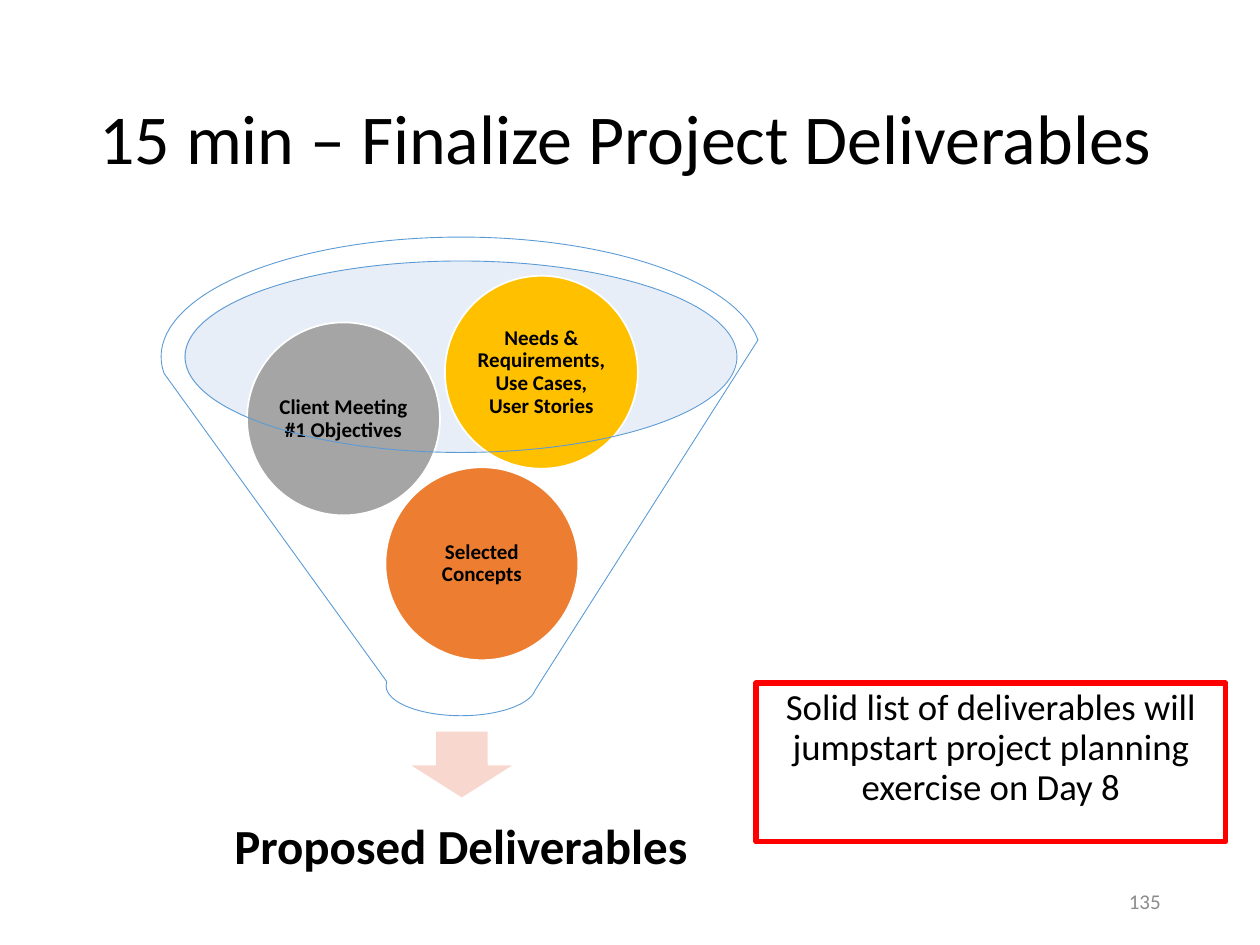
from dataclasses import dataclass

from lxml import etree
from pptx import Presentation
from pptx.dml.color import RGBColor
from pptx.enum.shapes import MSO_SHAPE
from pptx.enum.text import MSO_ANCHOR, PP_ALIGN
from pptx.oxml.ns import qn
from pptx.util import Cm, Pt

OVAL, ARROW, FUNNEL = MSO_SHAPE.OVAL, MSO_SHAPE.DOWN_ARROW, MSO_SHAPE.FUNNEL
TOP, MIDDLE = MSO_ANCHOR.TOP, MSO_ANCHOR.MIDDLE
LEFT, CENTER, RIGHT = PP_ALIGN.LEFT, PP_ALIGN.CENTER, PP_ALIGN.RIGHT


@dataclass(frozen=True)
class Theme:
    font: str = "Calibri"
    ink: str = "000000"
    gray: str = "8C8C8C"
    white: str = "FFFFFF"
    red: str = "FF0000"
    blue: str = "5B9BD5"
    pale: str = "C4D5EB"
    pink: str = "F8D7CE"
    title: int = 40
    goal: int = 28
    note: int = 21
    small: int = 12


THEME = Theme()
TITLE = "15 min – Finalize Project Deliverables"
GOAL = "Proposed Deliverables"
NOTE = "Solid list of deliverables will jumpstart project planning exercise on Day 8"
NUMBER = "135"
INPUTS = [
    ("Selected Concepts", "ED7D31", 7.77, 9.42),
    ("Client Meeting #1 Objectives", "A5A5A5", 4.98, 6.5),
    ("Needs & Requirements, Use Cases, User Stories", "FFC000", 8.97, 5.56),
]
BALL = 3.89


def write(shape, text, size, align=CENTER, anchor=MIDDLE, bold=False,
          color=THEME.ink, pad=None, space=0.9):
    """Fill a shape with one formatted paragraph."""
    frame = shape.text_frame
    frame.word_wrap = True
    frame.vertical_anchor = anchor
    if pad is not None:
        frame.margin_left = frame.margin_right = Cm(pad)
        frame.margin_top = frame.margin_bottom = Cm(pad)
    para = frame.paragraphs[0]
    para.text = text
    para.alignment = align
    para.line_spacing = space
    font = para.font
    font.name, font.size, font.bold = THEME.font, Pt(size), bold
    font.color.rgb = RGBColor.from_string(color)


def outline(shape, color, width):
    """Give a shape a solid outline."""
    shape.line.color.rgb = RGBColor.from_string(color)
    shape.line.width = Pt(width)


def draw(slide, kind, place, fill=None, line=None, width=1):
    """Add a preset shape with optional fill and outline."""
    shape = slide.shapes.add_shape(kind, *map(Cm, place))
    shape.shadow.inherit = False
    if fill:
        shape.fill.solid()
        shape.fill.fore_color.rgb = RGBColor.from_string(fill)
    else:
        shape.fill.background()
    if line:
        outline(shape, line, width)
    else:
        shape.line.fill.background()
    return shape


def label(slide, place, *args, **style):
    """Add a text box."""
    box = slide.shapes.add_textbox(*map(Cm, place))
    write(box, *args, **style)
    return box


def fade(shape, share):
    """Set the opacity of a solid fill in percent."""
    color = shape.fill._xPr.find(qn("a:solidFill"))[0]
    etree.SubElement(color, qn("a:alpha")).set("val", str(share * 1000))


def main():
    """Build and save the slide."""
    deck = Presentation()
    deck.slide_width, deck.slide_height = Cm(25.4), Cm(19.05)
    slide = deck.slides.add_slide(deck.slide_layouts[5])

    title = slide.shapes.title
    title.left, title.top, title.width, title.height = map(Cm, (1.75, 1.02, 21.9, 3.68))
    write(title, TITLE, THEME.title, align=LEFT)

    note = label(slide, (15.24, 13.77, 9.47, 3.2), NOTE, THEME.note, anchor=TOP)
    outline(note, THEME.red, 3)
    label(slide, (17.93, 17.65, 5.72, 1.02), NUMBER, THEME.small,
          align=RIGHT, color=THEME.gray, space=1.0)

    mouth = draw(slide, OVAL, (3.71, 5.26, 11.13, 3.86), THEME.pale)
    fade(mouth, 40)
    draw(slide, ARROW, (8.23, 14.73, 2.16, 1.37), THEME.pink, THEME.white)
    label(slide, (4.11, 15.82, 10.36, 2.59), GOAL, THEME.goal, bold=True, pad=0.56)
    for text, color, left, top in INPUTS:
        ball = draw(slide, OVAL, (left, top, BALL, BALL), color, THEME.white)
        write(ball, text, THEME.small, bold=True, pad=0.05)
    draw(slide, FUNNEL, (3.25, 4.78, 12.09, 9.65), line=THEME.blue, width=0.5)

    deck.save("out.pptx")


if __name__ == "__main__":
    main()
